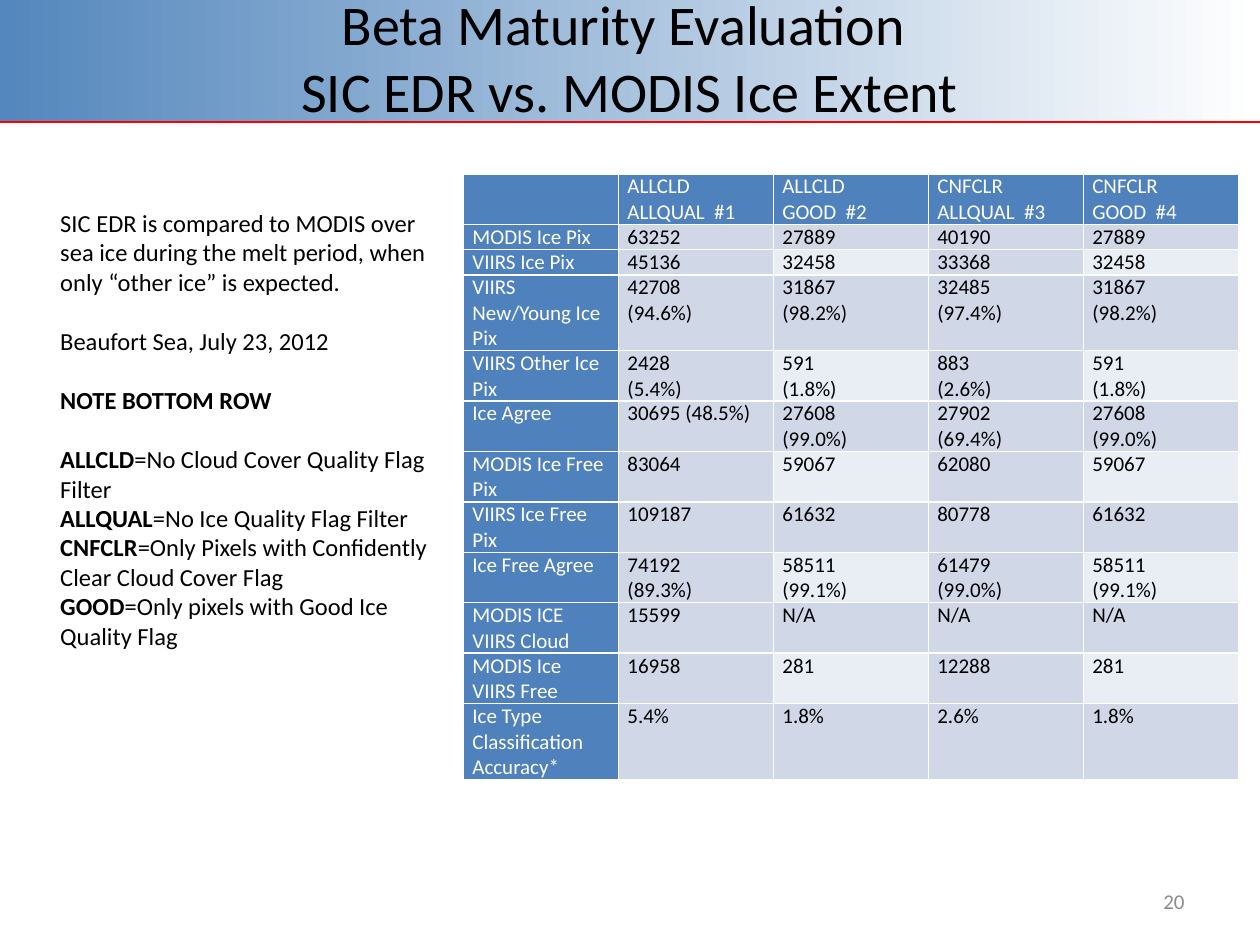
from dataclasses import dataclass

import pptx
import pptx.dml.color
import pptx.enum.shapes
import pptx.enum.text
import pptx.oxml
import pptx.util
from pptx.util import Inches

COLORS = {
    "blue": "4F81BD", "band": "D0D8E8", "pale": "E9EDF4", "banner": "5487BD",
    "white": "FFFFFF", "black": "000000", "red": "FF0000", "gray": "8C8C8C",
}
FONT = "Calibri"
LINE = 0.2  # height of one text line in the table
ALIGN = pptx.enum.text.PP_ALIGN
ANCHOR = pptx.enum.text.MSO_ANCHOR


@dataclass
class Row:
    lines: int
    cells: list[str]


@dataclass
class Note:
    term: str
    text: str
    gap: float = 0


ROWS = [
    Row(2, ["", "ALLCLD\nALLQUAL  #1", "ALLCLD\nGOOD  #2",
            "CNFCLR\nALLQUAL  #3", "CNFCLR\nGOOD  #4"]),
    Row(1, ["MODIS Ice Pix", "63252", "27889", "40190", "27889"]),
    Row(1, ["VIIRS Ice Pix", "45136", "32458", "33368", "32458"]),
    Row(3, ["VIIRS New/Young Ice Pix", "42708\n(94.6%)", "31867\n(98.2%)",
            "32485\n(97.4%)", "31867\n(98.2%)"]),
    Row(2, ["VIIRS Other Ice Pix", "2428\n(5.4%)", "591\n(1.8%)",
            "883\n(2.6%)", "591\n(1.8%)"]),
    Row(2, ["Ice Agree", "30695 (48.5%)", "27608\n(99.0%)",
            "27902\n(69.4%)", "27608\n(99.0%)"]),
    Row(2, ["MODIS Ice Free Pix", "83064", "59067", "62080", "59067"]),
    Row(2, ["VIIRS Ice Free Pix", "109187", "61632", "80778", "61632"]),
    Row(2, ["Ice Free Agree", "74192\n(89.3%)", "58511\n(99.1%)",
            "61479\n(99.0%)", "58511\n(99.1%)"]),
    Row(2, ["MODIS ICE\nVIIRS Cloud", "15599", "N/A", "N/A", "N/A"]),
    Row(2, ["MODIS Ice\nVIIRS Free", "16958", "281", "12288", "281"]),
    Row(3, ["Ice Type Classification Accuracy*", "5.4%", "1.8%", "2.6%", "1.8%"]),
]

NOTES = [
    Note("", "SIC EDR is compared to MODIS over sea ice during the melt period, "
             "when only “other ice” is expected."),
    Note("", "Beaufort Sea, July 23, 2012", 17),
    Note("NOTE BOTTOM ROW", "", 17),
    Note("ALLCLD", "=No Cloud Cover Quality Flag Filter", 17),
    Note("ALLQUAL", "=No Ice Quality Flag Filter"),
    Note("CNFCLR", "=Only Pixels with Confidently Clear Cloud Cover Flag"),
    Note("GOOD", "=Only pixels with Good Ice Quality Flag"),
]


def color(name: str) -> pptx.dml.color.RGBColor:
    return pptx.dml.color.RGBColor.from_string(COLORS[name])


def write(para, text: str, size: float, hue: str = "black", bold: bool = False) -> None:
    run = para.add_run()
    run.text = text
    run.font.name = FONT
    run.font.size = pptx.util.Pt(size)
    run.font.bold = bold
    run.font.color.rgb = color(hue)


def next_para(frame, index: int):
    return frame.add_paragraph() if index else frame.paragraphs[0]


def draw_header(slide) -> None:
    banner = slide.shapes.add_shape(
        pptx.enum.shapes.MSO_SHAPE.RECTANGLE,
        Inches(0), Inches(-0.01), Inches(10), Inches(0.97))
    banner.shadow.inherit = False
    banner.line.fill.background()
    banner.fill.gradient()
    banner.fill.gradient_angle = 0
    for stop, hue in zip(banner.fill.gradient_stops, ("banner", "white")):
        stop.color.rgb = color(hue)

    rule = slide.shapes.add_connector(
        pptx.enum.shapes.MSO_CONNECTOR.STRAIGHT,
        Inches(0), Inches(0.97), Inches(10), Inches(0.97))
    rule.line.color.rgb = color("red")
    rule.line.width = pptx.util.Pt(1.25)
    rule.element.spPr.append(pptx.oxml.parse_xml(
        '<a:effectLst xmlns:a="http://schemas.openxmlformats.org/drawingml/2006/main"/>'))

    title = slide.shapes.title
    title.left, title.top = Inches(0.5), Inches(0)
    title.width, title.height = Inches(9), Inches(0.9)
    frame = title.text_frame
    frame.auto_size = pptx.enum.text.MSO_AUTO_SIZE.NONE
    frame.vertical_anchor = ANCHOR.MIDDLE
    para = frame.paragraphs[0]
    para.alignment = ALIGN.CENTER
    write(para, "Beta Maturity Evaluation ", 32)
    para.add_line_break()
    write(para, "SIC EDR vs. MODIS Ice Extent", 32)
    rule.element.addnext(title.element)  # in front of the banner


def cell_hue(row: int, col: int) -> str:
    if row == 0 or col == 0:
        return "blue"
    return "pale" if row % 2 == 0 and col % 2 == 0 else "band"


def draw_table(slide, rows: list[Row]) -> None:
    count = len(rows[0].cells)
    height = LINE * sum(row.lines for row in rows)
    table = slide.shapes.add_table(
        len(rows), count, Inches(3.68), Inches(1.38),
        Inches(1.23 * count), Inches(height)).table
    for r, row in enumerate(rows):
        table.rows[r].height = Inches(LINE * row.lines)
        for c, text in enumerate(row.cells):
            cell = table.cell(r, c)
            cell.margin_left = cell.margin_right = Inches(0.07)
            cell.margin_top = cell.margin_bottom = 0
            hue = cell_hue(r, c)
            cell.fill.solid()
            cell.fill.fore_color.rgb = color(hue)
            ink = "white" if hue == "blue" else "black"
            if not text:
                cell.text_frame.paragraphs[0].font.size = pptx.util.Pt(12)
                continue
            for i, line in enumerate(text.split("\n")):
                write(next_para(cell.text_frame, i), line, 12, ink)


def draw_notes(slide, notes: list[Note]) -> None:
    frame = slide.shapes.add_textbox(
        Inches(0.38), Inches(1.6), Inches(3.14), Inches(3.94)).text_frame
    frame.word_wrap = True
    for i, note in enumerate(notes):
        para = next_para(frame, i)
        if note.gap:
            para.space_before = pptx.util.Pt(note.gap)
        if note.term:
            write(para, note.term, 14, bold=True)
        if note.text:
            write(para, note.text, 14)


def draw_number(slide, text: str) -> None:
    frame = slide.shapes.add_textbox(
        Inches(7.17), Inches(6.95), Inches(2.33), Inches(0.4)).text_frame
    frame.word_wrap = True
    frame.vertical_anchor = ANCHOR.MIDDLE
    frame.paragraphs[0].alignment = ALIGN.RIGHT
    write(frame.paragraphs[0], text, 12, "gray")


def main() -> None:
    deck = pptx.Presentation()
    deck.slide_width, deck.slide_height = Inches(10), Inches(7.5)
    slide = deck.slides.add_slide(deck.slide_layouts.get_by_name("Title Only"))
    draw_header(slide)
    draw_number(slide, "20")
    draw_table(slide, ROWS)
    draw_notes(slide, NOTES)
    deck.save("out.pptx")


if __name__ == "__main__":
    main()
